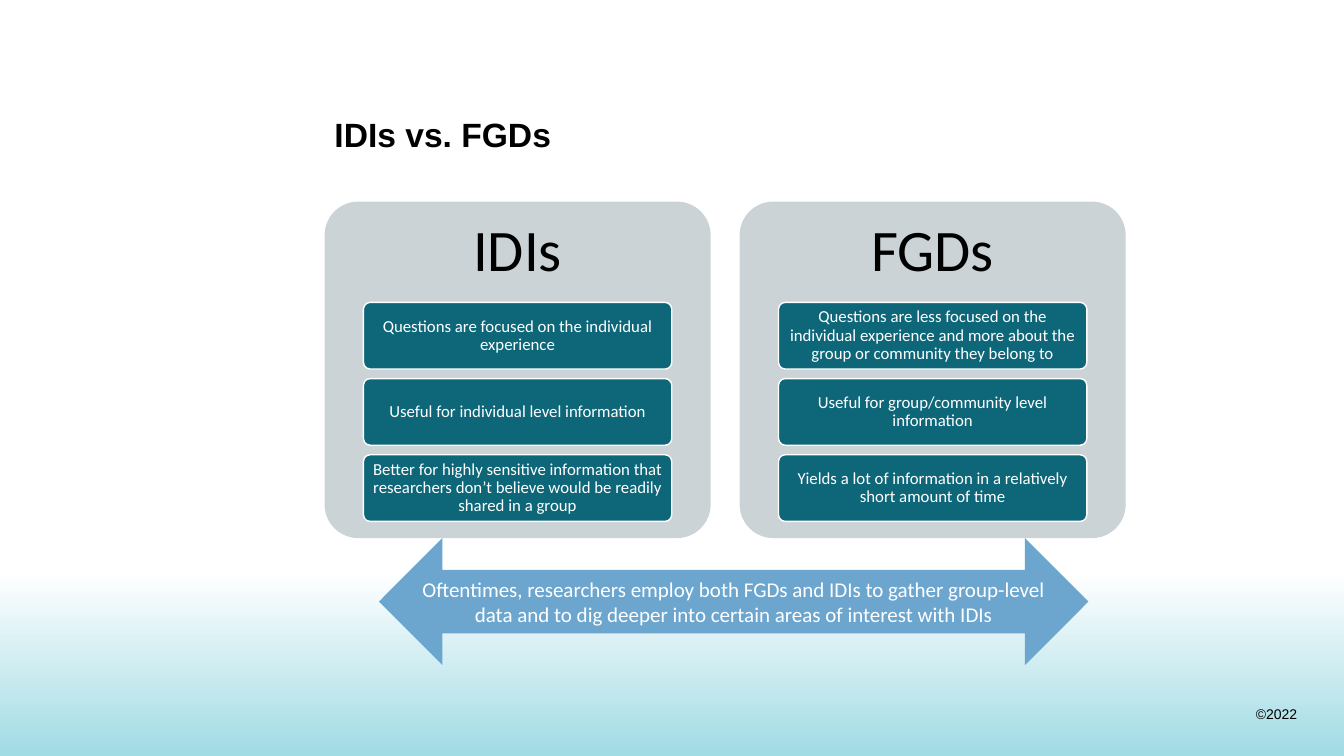
from pptx import Presentation
from pptx import util as u
from pptx.dml import color
from pptx.enum import shapes, text

TITLE = "IDIs vs. FGDs"
COPYRIGHT = "©2022"
METHODS = {
    "IDIs": [
        "Questions are focused on the individual experience",
        "Useful for individual level information",
        "Better for highly sensitive information that researchers don’t believe would be readily shared in a group",
    ],
    "FGDs": [
        "Questions are less focused on the individual experience and more about the group or community they belong to",
        "Useful for group/community level information",
        "Yields a lot of information in a relatively short amount of time",
    ],
}
SUMMARY = (
    "Oftentimes, researchers employ both FGDs and IDIs to gather group-level "
    "data and to dig deeper into certain areas of interest with IDIs"
)

BLACK, WHITE = "000000", "FFFFFF"
GREY, TEAL, BLUE, AQUA = "CCD3D7", "0E6779", "6CA6CF", "A1DBE4"
LEFT, CENTER, RIGHT = text.PP_ALIGN.LEFT, text.PP_ALIGN.CENTER, text.PP_ALIGN.RIGHT
TOP, MIDDLE = text.MSO_ANCHOR.TOP, text.MSO_ANCHOR.MIDDLE
KINDS = shapes.MSO_SHAPE

TITLE_STYLE = {"name": "Arial", "size": u.Pt(24), "bold": True}
COPYRIGHT_STYLE = {"name": "Arial", "size": u.Pt(10)}
HEADING_STYLE = {"name": "Calibri", "size": u.Pt(42)}
POINT_STYLE = {"name": "Calibri", "size": u.Pt(12)}
SUMMARY_STYLE = {"name": "Calibri", "size": u.Pt(15)}

SLIDE_WIDTH, SLIDE_HEIGHT = 33.87, 19.05
BAND_TOP = 14.4
CARD_LEFT, CARD_TOP, CARD_WIDTH, CARD_HEIGHT, CARD_STEP = 8.18, 5.08, 9.73, 8.48, 10.46
HEADING_HEIGHT = 2.54
POINT_WIDTH, POINT_HEIGHT, POINT_STEP = 7.77, 1.68, 1.92


def rgb(value):
    return color.RGBColor.from_string(value)


def set_all(target, values):
    for name, value in values.items():
        setattr(target, name, value)


def add_block(slide, kind, box, fill=None, line=None):
    shape = slide.shapes.add_shape(kind, *map(u.Cm, box))
    shape.shadow.inherit = False
    if fill:
        shape.fill.solid()
        shape.fill.fore_color.rgb = rgb(fill)
    if line:
        shape.line.color.rgb = rgb(line)
        shape.line.width = u.Pt(1)
    else:
        shape.line.fill.background()
    if kind == KINDS.ROUNDED_RECTANGLE:
        shape.adjustments[0] = 0.1
    return shape


def write(shape, words, style, ink=BLACK, align=CENTER, anchor=MIDDLE, spacing=1.0, inset=None, wrap=True):
    frame = shape.text_frame
    set_all(frame, {"word_wrap": wrap, "vertical_anchor": anchor})
    if inset is not None:
        sides = ("margin_left", "margin_top", "margin_right", "margin_bottom")
        set_all(frame, dict.fromkeys(sides, u.Cm(inset)))
    paragraph = frame.paragraphs[0]
    set_all(paragraph, {"text": words, "alignment": align, "line_spacing": spacing})
    font = paragraph.runs[0].font
    set_all(font, style)
    font.color.rgb = rgb(ink)


def add_label(slide, box, words, style, **layout):
    write(slide.shapes.add_textbox(*map(u.Cm, box)), words, style, **layout)


def add_band(slide):
    band = add_block(slide, KINDS.RECTANGLE, (0, BAND_TOP, SLIDE_WIDTH, SLIDE_HEIGHT - BAND_TOP))
    band.fill.gradient()
    band.fill.gradient_angle = 270
    for stop, position, shade in zip(band.fill.gradient_stops, (0, 1), (WHITE, AQUA)):
        stop.position = position
        stop.color.rgb = rgb(shade)


def add_card(slide, left, heading, points):
    add_block(slide, KINDS.ROUNDED_RECTANGLE, (left, CARD_TOP, CARD_WIDTH, CARD_HEIGHT), GREY)
    heading_box = (left, CARD_TOP, CARD_WIDTH, HEADING_HEIGHT)
    add_label(slide, heading_box, heading, HEADING_STYLE, spacing=0.9, inset=0.43)
    point_left = left + (CARD_WIDTH - POINT_WIDTH) / 2
    for row, point in enumerate(points):
        top = CARD_TOP + HEADING_HEIGHT + row * POINT_STEP
        box = (point_left, top, POINT_WIDTH, POINT_HEIGHT)
        pill = add_block(slide, KINDS.ROUNDED_RECTANGLE, box, TEAL, WHITE)
        write(pill, point, POINT_STYLE, ink=WHITE, spacing=0.9, inset=0.08)


def main():
    presentation = Presentation()
    set_all(presentation, {"slide_width": u.Cm(SLIDE_WIDTH), "slide_height": u.Cm(SLIDE_HEIGHT)})
    slide = presentation.slides.add_slide(presentation.slide_layouts[6])

    add_band(slide)
    add_label(slide, (31.39, 17.65, 1.55, 0.69), COPYRIGHT, COPYRIGHT_STYLE, align=RIGHT, anchor=TOP, wrap=False)
    add_label(slide, (CARD_LEFT, 2.74, 21.11, 1.83), TITLE, TITLE_STYLE, align=LEFT, anchor=TOP)
    for column, (heading, points) in enumerate(METHODS.items()):
        add_card(slide, CARD_LEFT + column * CARD_STEP, heading, points)
    arrow = add_block(slide, KINDS.LEFT_RIGHT_ARROW, (9.55, CARD_TOP + CARD_HEIGHT, 17.88, 3.2), BLUE)
    write(arrow, SUMMARY, SUMMARY_STYLE, ink=WHITE)

    presentation.save("out.pptx")


if __name__ == "__main__":
    main()
